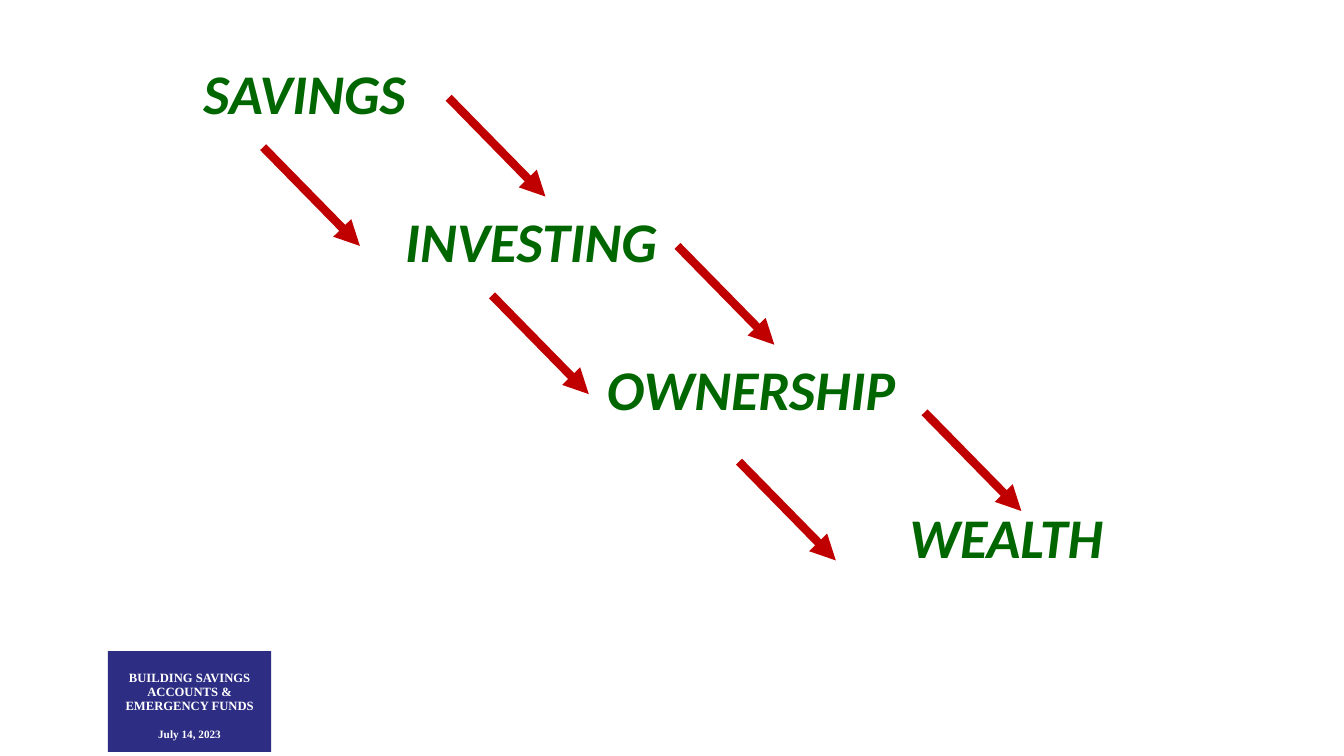
"""Build a slide that steps from savings down to wealth."""
from lxml.etree import SubElement
from pptx import Presentation
from pptx.dml.color import RGBColor
from pptx.enum.shapes import MSO_CONNECTOR, MSO_SHAPE
from pptx.enum.text import MSO_ANCHOR, PP_ALIGN
from pptx.oxml.ns import qn
from pptx.util import Inches, Pt

STEPS = [("SAVINGS", 1), ("INVESTING", 3), ("OWNERSHIP", 5), ("WEALTH", 8)]
FOOTER = [("BUILDING SAVINGS ACCOUNTS & EMERGENCY FUNDS", 9, 0), ("July 14, 2023", 8, 11.5)]
COLORS = {"step": "006600", "arrow": "C00000", "panel": "2D2D83", "panel_text": "FFFFFF"}

ARROW_STARTS = [(2.61, 1.46), (4.88, 2.93), (7.33, 4.58)]
ARROW_SIZE = (0.96, 0.98)
PAIR_OFFSETS = [(0, 0), (1.84, -0.49)]
STEP_GAP = 62.5


def rgb(name):
    """Return the named colour."""
    return RGBColor.from_string(COLORS[name])


def add_text(p, text, size, font, color):
    """Add one bold run to a paragraph with tight lines."""
    p.line_spacing = 0.9
    r = p.add_run()
    r.text = text
    r.font.size, r.font.name, r.font.bold = Pt(size), font, True
    r.font.color.rgb = rgb(color)
    return r


def paragraph(tf, i):
    """Return the first paragraph, or a new one after it."""
    return tf.add_paragraph() if i else tf.paragraphs[0]


def add_footer(s):
    """Add the panel with the session name and date."""
    sp = s.shapes.add_shape(MSO_SHAPE.RECTANGLE, Inches(1.07), Inches(6.46), Inches(1.62), Inches(1))
    sp.shadow.inherit = False
    sp.fill.solid()
    sp.fill.fore_color.rgb = rgb("panel")
    sp.line.fill.background()
    tf = sp.text_frame
    tf.word_wrap = True
    tf.vertical_anchor = MSO_ANCHOR.MIDDLE
    tf.margin_top = Inches(0.15)
    for i, (text, size, gap) in enumerate(FOOTER):
        p = paragraph(tf, i)
        p.alignment = PP_ALIGN.CENTER
        if gap:
            p.space_before = Pt(gap)
        add_text(p, text, size, "Times New Roman", "panel_text")


def add_steps(s):
    """Add the four steps, each indented further than the last."""
    sp = s.shapes.add_textbox(Inches(0.92), Inches(0.61), Inches(11.5), Inches(5.3))
    tf = sp.text_frame
    tf.word_wrap = True
    for i, (text, indent) in enumerate(STEPS):
        p = paragraph(tf, i)
        p._p.get_or_add_pPr().set("marL", str(Inches(indent)))
        if i:
            p.space_before = Pt(STEP_GAP)
        add_text(p, text, 40, "Calibri", "step").font.italic = True


def add_arrow(s, x, y):
    """Add one arrow that points down to the right."""
    dx, dy = ARROW_SIZE
    ends = [Inches(v) for v in (x, y, x + dx, y + dy)]
    c = s.shapes.add_connector(MSO_CONNECTOR.STRAIGHT, *ends)
    c.line.color.rgb = rgb("arrow")
    c.line.width = Pt(6)
    SubElement(c.line._get_or_add_ln(), qn("a:tailEnd"), type="triangle")
    SubElement(c._element.spPr, qn("a:effectLst"))


def main():
    """Build and save the slide."""
    prs = Presentation()
    prs.slide_width, prs.slide_height = Inches(13.33), Inches(7.5)
    s = prs.slides.add_slide(prs.slide_layouts[6])
    add_footer(s)
    add_steps(s)
    for x, y in ARROW_STARTS:
        for dx, dy in PAIR_OFFSETS:
            add_arrow(s, x + dx, y + dy)
    prs.save("out.pptx")


if __name__ == "__main__":
    main()
